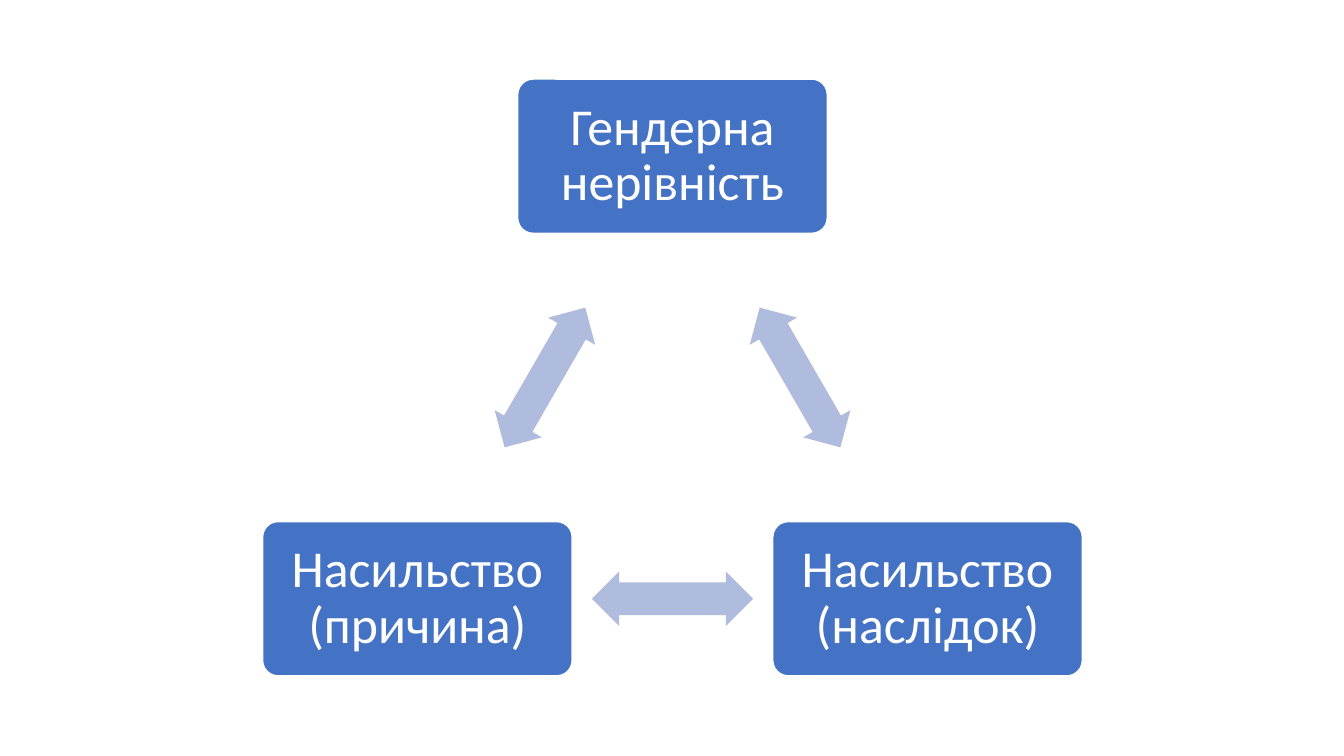
from dataclasses import dataclass
from math import atan2, degrees

from pptx import Presentation
from pptx.dml.color import RGBColor
from pptx.enum.shapes import MSO_SHAPE as Preset
from pptx.enum.text import MSO_ANCHOR as Anchor, PP_ALIGN as Align
from pptx.shapes.autoshape import Shape
from pptx.slide import Slide
from pptx.util import Pt

EMU_PER_PX = 9144  # 100 px to the inch
SLIDE_WIDTH, SLIDE_HEIGHT = 1333, 750
BOX_WIDTH, BOX_HEIGHT = 307, 153
ARROW_WIDTH, ARROW_HEIGHT = 160, 54
TEXT_INSET = 19


@dataclass(frozen=True)
class Theme:
    box: RGBColor = RGBColor(0x44, 0x72, 0xC4)
    arrow: RGBColor = RGBColor(0xB0, 0xBC, 0xDE)
    light: RGBColor = RGBColor(0xFF, 0xFF, 0xFF)
    font: str = "Calibri"
    text_size: int = 37


@dataclass(frozen=True)
class Stage:
    """A box of the cycle, placed by its centre."""
    text: str
    x: int
    y: int


THEME = Theme()
STAGES = [
    Stage("Гендерна нерівність", 667, 155),
    Stage("Насильство (наслідок)", 920, 594),
    Stage("Насильство (причина)", 414, 594),
]


def px(length: float) -> int:
    return round(length * EMU_PER_PX)


def add_centred_shape(slide: Slide, preset: Preset, x: float, y: float,
                      width: int, height: int, fill: RGBColor,
                      adjustments: list[float]) -> Shape:
    shape = slide.shapes.add_shape(
        preset, px(x - width / 2), px(y - height / 2), px(width), px(height))
    shape.shadow.inherit = False
    shape.fill.solid()
    shape.fill.fore_color.rgb = fill
    shape.line.fill.background()
    for index, value in enumerate(adjustments):
        shape.adjustments[index] = value
    return shape


def write_text(shape: Shape, text: str, *, size: int, color: RGBColor,
               font: str, inset: int, line_spacing: float) -> None:
    frame = shape.text_frame
    frame.word_wrap = True
    frame.vertical_anchor = Anchor.MIDDLE
    frame.margin_left = frame.margin_right = px(inset)
    frame.margin_top = frame.margin_bottom = px(inset)
    paragraph = frame.paragraphs[0]
    paragraph.alignment = Align.CENTER
    paragraph.line_spacing = line_spacing
    run = paragraph.add_run()
    run.text = text
    run.font.size = Pt(size)
    run.font.name = font
    run.font.color.rgb = color


def add_box(slide: Slide, stage: Stage) -> None:
    box = add_centred_shape(slide, Preset.ROUNDED_RECTANGLE, stage.x, stage.y,
                            BOX_WIDTH, BOX_HEIGHT, THEME.box, [0.1])
    box.line.color.rgb = THEME.light
    box.line.width = Pt(1)
    write_text(box, stage.text, size=THEME.text_size, color=THEME.light,
               font=THEME.font, inset=TEXT_INSET, line_spacing=0.9)


def add_arrow(slide: Slide, start: Stage, end: Stage) -> None:
    """Put a double arrow halfway between two boxes, along their direction."""
    arrow = add_centred_shape(
        slide, Preset.LEFT_RIGHT_ARROW, (start.x + end.x) / 2,
        (start.y + end.y) / 2, ARROW_WIDTH, ARROW_HEIGHT, THEME.arrow,
        [0.6, 0.5])
    arrow.rotation = round(degrees(atan2(end.y - start.y, end.x - start.x))) % 360


def main() -> None:
    presentation = Presentation()
    presentation.slide_width = px(SLIDE_WIDTH)
    presentation.slide_height = px(SLIDE_HEIGHT)
    slide = presentation.slides.add_slide(presentation.slide_layouts[6])
    for stage, following in zip(STAGES, STAGES[1:] + STAGES[:1]):
        add_box(slide, stage)
        add_arrow(slide, stage, following)
    presentation.save("out.pptx")


if __name__ == "__main__":
    main()
